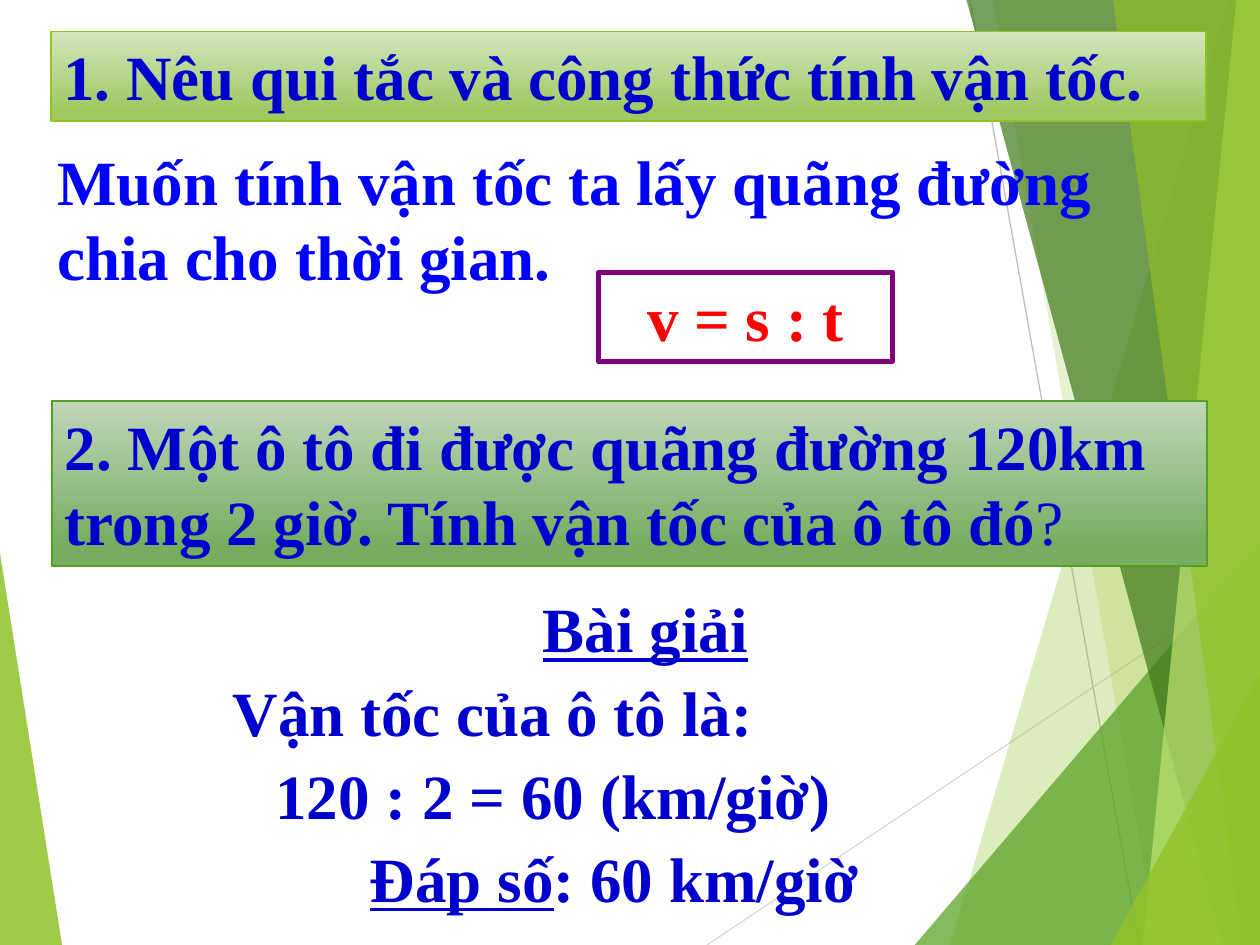
"""Build the velocity review slide with its faceted green backdrop."""
from lxml.etree import SubElement
from pptx import Presentation
from pptx.dml.color import RGBColor
from pptx.enum.shapes import MSO_CONNECTOR, MSO_SHAPE
from pptx.enum.text import MSO_ANCHOR, PP_ALIGN
from pptx.oxml.ns import qn
from pptx.util import Pt

THEME = {
    "font": "Times New Roman", "size": 36,
    "navy": "0000CC", "blue": "0000FF", "red": "FF0000", "purple": "800080",
    "lime": "90C226", "green": "54A021", "forest": "3F7819", "pale": "C0E474",
    "light_gray": "D9D9D9", "gray": "BFBFBF",
    "lime_gradient": ("D3E5BE", "A0C962"),
    "green_gradient": ("C0D6B9", "76AD61"),
}
WIDTH, HEIGHT = 720, 540

LEFT_FACET = ([(0, 316), (35.5, 540), (0, 540)], "lime", 85)
RAYS = [
    ((404, 540), (720, 329), "light_gray"),
    ((554.4, 0), (651, 540), "gray"),
]
RIGHT_FACETS = [
    ([(702, 0), (543, 540), (720, 540), (720, 0)], "lime", 30),
    ([(567.5, 0), (661.5, 540), (720, 540), (720, 0)], "lime", 20),
    ([(522.7, 540), (720, 309), (720, 540)], "green", 72),
    ([(552.3, 0), (698.5, 540), (720, 540), (720, 0)], "forest", 70),
    ([(706.5, 0), (653, 540), (720, 540), (720, 0)], "pale", 70),
    ([(636, 0), (710, 540), (720, 540), (720, 0)], "lime", 65),
    ([(634.5, 540), (720, 385), (720, 540)], "lime", 80),
]

BOLD, UNDERLINED, PLAIN = (True, False), (True, True), (False, False)
BOXES = [
    {"at": (29, 18, 660, 51), "gradient": "lime_gradient", "line": ("lime", 1), "color": "navy",
     "paragraphs": [(0, False, [("1. Nêu qui tắc và công thức tính vận tốc.", BOLD)])]},
    {"at": (25.7, 77.8, 663, 94.3), "color": "blue",
     "paragraphs": [(0, False, [
         ("Muốn tính vận tốc ta lấy quãng đường chia cho thời gian.", BOLD)])]},
    {"at": (342, 155.5, 168, 51), "line": ("purple", 3), "color": "red",
     "paragraphs": [(0, True, [("v = s : t", BOLD)])]},
    {"at": (77.8, 338.4, 581.8, 195), "color": "navy", "line_spacing": 0.9, "gap": 8.7,
     "paragraphs": [
         (0, True, [("Bài giải", UNDERLINED)]),
         (48, False, [("Vận tốc của ô tô là:", BOLD)]),
         (72.5, False, [("120 : 2 = 60 (km/giờ)", BOLD)]),
         (126.5, False, [("Đáp số", UNDERLINED), (": 60 km/giờ", BOLD)])]},
    {"at": (29.9, 229.2, 660, 94.3), "gradient": "green_gradient", "line": ("green", 1),
     "color": "navy",
     "paragraphs": [(0, False, [
         ("2. Một ô tô đi được quãng đường 120km trong 2 giờ. Tính vận tốc của ô tô đó", BOLD),
         ("?", PLAIN)])]},
]


def color(name):
    return RGBColor.from_string(THEME[name])


def add_facet(slide, points, fill, opacity):
    corners = [(Pt(x), Pt(y)) for x, y in points]
    builder = slide.shapes.build_freeform(*corners[0], scale=1.0)
    builder.add_line_segments(corners[1:], close=True)
    shape = builder.convert_to_shape()
    shape.shadow.inherit = False
    shape.fill.solid()
    shape.fill.fore_color.rgb = color(fill)
    shape.line.fill.background()
    solid = shape.fill._xPr.find(qn("a:solidFill"))
    SubElement(solid[0], qn("a:alpha"), val=str(opacity * 1000))


def add_ray(slide, start, end, stroke):
    ends = [Pt(value) for value in (*start, *end)]
    connector = slide.shapes.add_connector(MSO_CONNECTOR.STRAIGHT, *ends)
    connector.line.color.rgb = color(stroke)
    connector.line.width = Pt(0.75)
    SubElement(connector._element.spPr, qn("a:effectLst"))


def fill_gradient(shape, shades):
    shape.fill.gradient()
    shape.fill.gradient_angle = 270
    for stop, shade, position in zip(shape.fill.gradient_stops, shades, (0, 0.88)):
        stop.color.rgb = RGBColor.from_string(shade)
        stop.position = position


def write_text(frame, box):
    frame.word_wrap = True
    frame.vertical_anchor = MSO_ANCHOR.TOP
    for index, (indent, centered, runs) in enumerate(box["paragraphs"]):
        paragraph = frame.add_paragraph() if index else frame.paragraphs[0]
        paragraph.alignment = PP_ALIGN.CENTER if centered else PP_ALIGN.LEFT
        paragraph.line_spacing = box.get("line_spacing", 1.0)
        paragraph.space_before = Pt(box.get("gap", 0) if index else 0)
        paragraph._p.get_or_add_pPr().set("marL", str(Pt(indent)))
        for text, (bold, underlined) in runs:
            run = paragraph.add_run()
            run.text = text
            run.font.name = THEME["font"]
            run.font.size = Pt(THEME["size"])
            run.font.bold = bold
            run.font.underline = underlined
            run.font.color.rgb = color(box["color"])


def add_box(slide, box):
    place = [Pt(value) for value in box["at"]]
    if "line" in box:
        shape = slide.shapes.add_shape(MSO_SHAPE.RECTANGLE, *place)
        shape.shadow.inherit = False
        stroke, width = box["line"]
        shape.line.color.rgb = color(stroke)
        shape.line.width = Pt(width)
        if "gradient" in box:
            fill_gradient(shape, THEME[box["gradient"]])
        else:
            shape.fill.background()
    else:
        shape = slide.shapes.add_textbox(*place)
    write_text(shape.text_frame, box)


def main():
    presentation = Presentation()
    presentation.slide_width, presentation.slide_height = Pt(WIDTH), Pt(HEIGHT)
    slide = presentation.slides.add_slide(presentation.slide_layouts[6])
    add_facet(slide, *LEFT_FACET)
    for ray in RAYS:
        add_ray(slide, *ray)
    for facet in RIGHT_FACETS:
        add_facet(slide, *facet)
    for box in BOXES:
        add_box(slide, box)
    presentation.save("out.pptx")


if __name__ == "__main__":
    main()
